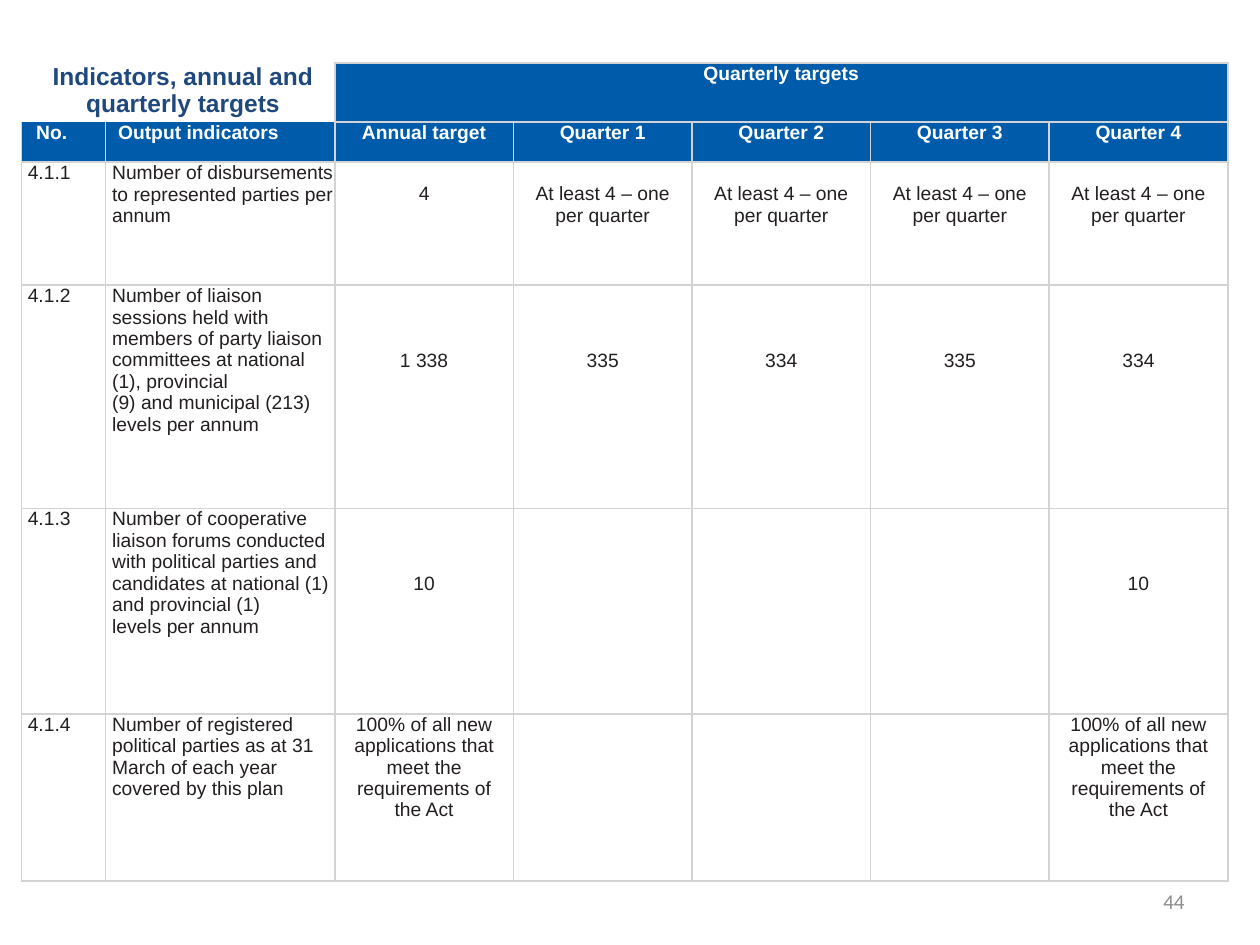
from dataclasses import dataclass

from lxml.etree import SubElement
from pptx import Presentation
from pptx.dml.color import RGBColor
from pptx.enum.text import MSO_ANCHOR, PP_ALIGN
from pptx.oxml.ns import qn
from pptx.util import Cm, Pt

BLUE, NAVY, WHITE, INK, GREY, RULE = "005CAB", "1F497D", "FFFFFF", "231F20", "8C8C8C", "D1D3D4"
LEFT, CENTER, RIGHT = PP_ALIGN.LEFT, PP_ALIGN.CENTER, PP_ALIGN.RIGHT
COLUMNS = [1.7, 4.62] + [3.6] * 5
ROWS = [1.19, 0.81, 2.48, 4.5, 4.14, 3.37]


@dataclass
class Style:
    size: float = 11
    color: str = INK
    bold: bool = False
    align: PP_ALIGN = CENTER
    font: str = "Arial"


@dataclass
class Indicator:
    number: str
    output: list[str]
    targets: list[list[str]]  # annual target, then quarters 1 to 4
    top: float = 0  # gap above the targets, cm
    side: float = 0  # gap beside the targets, cm


AT_LEAST = ["At least 4 – one", "per quarter"]
ALL_NEW = ["100% of all new applications that meet the requirements of the Act"]
INDICATORS = [
    Indicator("4.1.1", ["Number of disbursements to represented parties per annum"],
              [["4"]] + [AT_LEAST] * 4, 0.43),
    Indicator("4.1.2",
              ["Number of liaison sessions held with members of party liaison "
               "committees at national (1), provincial",
               "(9) and municipal (213)", "levels per annum"],
              [["1 338"], ["335"], ["334"], ["335"], ["334"]], 1.3),
    Indicator("4.1.3",
              ["Number of cooperative liaison forums conducted with political "
               "parties and candidates at national (1)",
               "and provincial (1)", "levels per annum"],
              [["10"], [], [], [], ["10"]], 1.3),
    Indicator("4.1.4",
              ["Number of registered political parties as at 31 March of each "
               "year covered by this plan"],
              [ALL_NEW, [], [], [], ALL_NEW], 0, 0.25),
]


def rgb(color: str) -> RGBColor:
    return RGBColor.from_string(color)


def write(tf, lines: list[str], style: Style) -> None:
    for i, line in enumerate(lines):
        p = tf.paragraphs[0] if i == 0 else tf.add_paragraph()
        p.alignment = style.align
        r = p.add_run()
        r.text = line
        r.font.name, r.font.size, r.font.bold = style.font, Pt(style.size), style.bold
        r.font.color.rgb = rgb(style.color)


def set_borders(cell, sides: str) -> None:
    """Rule the named sides (of L, R, T, B) and clear the others."""
    tc_pr = cell._tc.get_or_add_tcPr()
    for i, side in enumerate("LRTB"):
        ln = SubElement(tc_pr, qn(f"a:ln{side}"), w=str(Pt(1)))
        if side in sides:
            fill = SubElement(ln, qn("a:solidFill"))
            SubElement(fill, qn("a:srgbClr"), val=RULE)
        else:
            SubElement(ln, qn("a:noFill"))
        tc_pr.insert(i, ln)


def fill_cell(cell, lines: list[str], style: Style, fill: str = "",
              left: float = 0, right: float = 0, top: float = 0) -> None:
    cell.margin_left, cell.margin_right = Cm(left), Cm(right)
    cell.margin_top, cell.margin_bottom = Cm(top), Cm(0)
    if fill:
        cell.fill.solid()
        cell.fill.fore_color.rgb = rgb(fill)
    write(cell.text_frame, lines, style)


prs = Presentation()
prs.slide_width, prs.slide_height = Cm(25.4), Cm(19.05)
s = prs.slides.add_slide(prs.slide_layouts[6])

# Page number
sp = s.shapes.add_textbox(Cm(18.2), Cm(17.66), Cm(5.93), Cm(1.01))
tf = sp.text_frame
tf.word_wrap = True
tf.vertical_anchor = MSO_ANCHOR.MIDDLE
write(tf, ["44"], Style(12, GREY, align=RIGHT, font="Calibri"))

# Table grid
table = s.shapes.add_table(len(ROWS), len(COLUMNS), Cm(0.43), Cm(1.27),
                           Cm(sum(COLUMNS)), Cm(sum(ROWS))).table
table.first_row = table.horz_banding = False
for column, width in zip(table.columns, COLUMNS):
    column.width = Cm(width)
for row, height in zip(table.rows, ROWS):
    row.height = Cm(height)
for y in range(len(ROWS)):
    for x in range(len(COLUMNS)):
        cell = table.cell(y, x)
        cell.fill.background()
        sides = "LRTB"
        if x < 2 and y < 2:
            sides = "LRB" if y else "R" if x == 0 else ""
        set_borders(cell, sides)

# Title and header rows
head = Style(color=WHITE, bold=True)
head_left = Style(color=WHITE, bold=True, align=LEFT)
table.cell(0, 0).merge(table.cell(0, 1))
table.cell(0, 2).merge(table.cell(0, 6))
fill_cell(table.cell(0, 0), ["Indicators, annual and quarterly targets"],
          Style(14, NAVY, True), left=0.2)
fill_cell(table.cell(0, 2), ["Quarterly targets"], head, BLUE)
fill_cell(table.cell(1, 0), ["No."], head_left, BLUE, left=0.3)
fill_cell(table.cell(1, 1), ["Output indicators"], head_left, BLUE, left=0.25)
for x, label in enumerate(["Annual target"] + [f"Quarter {q}" for q in range(1, 5)], 2):
    fill_cell(table.cell(1, x), [label], head, BLUE)

# Indicator rows
body, body_left = Style(), Style(align=LEFT)
for y, item in enumerate(INDICATORS, 2):
    fill_cell(table.cell(y, 0), [item.number], body_left, left=0.13)
    fill_cell(table.cell(y, 1), item.output, body_left, left=0.13)
    for x, target in enumerate(item.targets, 2):
        fill_cell(table.cell(y, x), target, body,
                  left=item.side, right=item.side, top=item.top)

prs.save("out.pptx")
